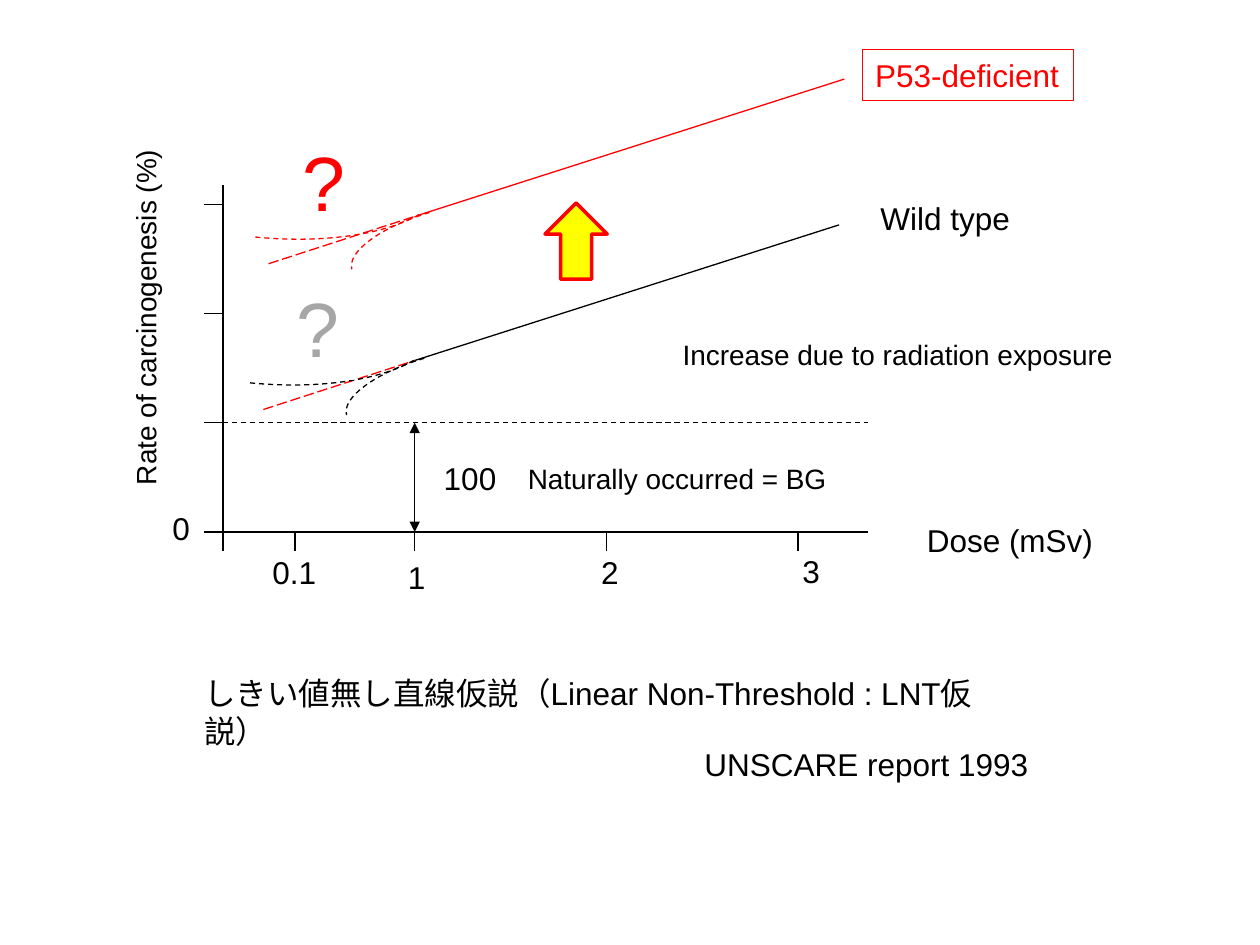
from dataclasses import dataclass

from lxml.etree import SubElement
from pptx import Presentation
from pptx.dml.color import RGBColor
from pptx.enum.dml import MSO_LINE
from pptx.enum.shapes import MSO_CONNECTOR, MSO_SHAPE
from pptx.oxml.ns import qn
from pptx.util import Pt


@dataclass(frozen=True)
class Theme:
    font: str = "Arial"
    ink: str = "000000"
    alert: str = "FF0000"
    muted: str = "A6A6A6"
    paper: str = "FFFFFF"
    highlight: str = "FFFF00"
    note: float = 16
    body: float = 18
    mark: float = 44
    thin: float = 0.75
    thick: float = 2


THEME = Theme()


@dataclass(frozen=True)
class Label:
    text: str
    left: float
    top: float
    width: float
    height: float = 29
    size: float = THEME.body
    color: str = THEME.ink
    border: str | None = None
    rotation: float = 0
    wrap: bool = False


@dataclass(frozen=True)
class Stroke:
    x1: float
    y1: float
    x2: float
    y2: float
    color: str = THEME.ink
    dash: MSO_LINE | None = None
    arrows: bool = False


@dataclass(frozen=True)
class Arc:
    left: float
    top: float
    width: float
    height: float
    rotation: float
    start: float = 162
    mirrored: bool = False


@dataclass(frozen=True)
class Response:
    shift_x: float
    shift_y: float
    color: str
    mark_color: str
    mark_border: str | None = None


AXIS_X, AXIS_Y, AXIS_RIGHT, AXIS_TOP = 127.5, 304, 496, 106
TICK = 11
RATE_STEP, DOSE_STEP = 62.4, 109.5
BACKGROUND_Y = AXIS_Y - RATE_STEP
DOSE_ONE_X = AXIS_X + DOSE_STEP

AXES = [
    Stroke(AXIS_X, AXIS_TOP, AXIS_X, AXIS_Y),
    Stroke(AXIS_X, AXIS_Y, AXIS_RIGHT, AXIS_Y),
    Stroke(AXIS_X, BACKGROUND_Y, AXIS_RIGHT, BACKGROUND_Y, dash=MSO_LINE.DASH),
    Stroke(DOSE_ONE_X, BACKGROUND_Y, DOSE_ONE_X, AXIS_Y, arrows=True),
]
DOSE_TICKS = [168.5] + [AXIS_X + DOSE_STEP * step for step in range(4)]
RATE_TICKS = [AXIS_Y - RATE_STEP * step for step in range(4)]

LOW_DOSE_ARCS = [
    Arc(196, 204, 103.5, 37.5, 343.8, mirrored=True),
    Arc(103, 68.5, 88.5, 212.5, 95.7, start=170.14),
]
RESPONSES = [
    Response(0, 0, THEME.ink, THEME.muted, THEME.paper),
    Response(3, -83.3, THEME.alert, THEME.alert),
]

LABELS = [
    Label("0", 91.5, 287.5, 24.5),
    Label("0.1", 148.5, 312.5, 39.5),
    Label("1", 226, 315.5, 24.5),
    Label("2", 336.5, 312.5, 24.5),
    Label("3", 451.5, 312, 24.5),
    Label("100", 246.5, 258.5, 44.5),
    Label("しきい値無し直線仮説（Linear Non-Threshold : LNT仮説）", 109.5, 381.5, 463.5, wrap=True),
    Label("Rate of carcinogenesis (%)", -21.5, 166.5, 209, 26.5, THEME.note, rotation=270),
    Label("Increase due to radiation exposure", 383, 189.5, 263.5, 26.5, THEME.note),
    Label("Dose (mSv)", 522.5, 294, 110),
    Label("UNSCARE report 1993", 395.5, 422, 201.5),
    Label("Naturally occurred = BG", 294.5, 260, 187, 26.5, THEME.note),
    Label("Wild type", 496, 110, 89.5),
    Label("P53-deficient", 493, 28.5, 120.5, color=THEME.alert, border=THEME.alert),
]


def paint_line(line, color: str, width: float = THEME.thin, dash: MSO_LINE | None = None) -> None:
    line.color.rgb = RGBColor.from_string(color)
    line.width = Pt(width)
    if dash is not None:
        line.dash_style = dash


def draw_label(page, label: Label) -> None:
    box = page.shapes.add_textbox(Pt(label.left), Pt(label.top), Pt(label.width), Pt(label.height))
    box.rotation = label.rotation
    box.text_frame.word_wrap = label.wrap
    if label.border:
        paint_line(box.line, label.border)
    para = box.text_frame.paragraphs[0]
    para.text = label.text
    para.font.name = THEME.font
    para.font.size = Pt(label.size)
    para.font.color.rgb = RGBColor.from_string(label.color)


def draw_stroke(page, stroke: Stroke) -> None:
    connector = page.shapes.add_connector(
        MSO_CONNECTOR.STRAIGHT, Pt(stroke.x1), Pt(stroke.y1), Pt(stroke.x2), Pt(stroke.y2)
    )
    paint_line(connector.line, stroke.color, dash=stroke.dash)
    properties = connector.element.spPr
    if stroke.arrows:
        for end in ("a:headEnd", "a:tailEnd"):
            SubElement(properties.find(qn("a:ln")), qn(end), type="triangle")
    SubElement(properties, qn("a:effectLst"))


def draw_arc(page, arc: Arc, response: Response) -> None:
    shape = page.shapes.add_shape(
        MSO_SHAPE.ARC,
        Pt(arc.left + response.shift_x),
        Pt(arc.top + response.shift_y),
        Pt(arc.width),
        Pt(arc.height),
    )
    shape.rotation = arc.rotation
    shape.adjustments[0] = arc.start
    shape.shadow.inherit = False
    shape.fill.background()
    paint_line(shape.line, response.color, dash=MSO_LINE.DASH)
    if arc.mirrored:
        shape.element.spPr.find(qn("a:xfrm")).set("flipH", "1")


def draw_response(page, response: Response) -> None:
    x, y = response.shift_x, response.shift_y
    draw_stroke(page, Stroke(237 + x, 206 + y, 479.5 + x, 128.5 + y, response.color))
    draw_stroke(page, Stroke(150.5 + x, 234 + y, 237 + x, 206 + y, THEME.alert, MSO_LINE.LONG_DASH))
    for arc in LOW_DOSE_ARCS:
        draw_arc(page, arc, response)
    draw_label(page, Label("?", 162.5 + x, 156.5 + y, 39.5, 60.5, THEME.mark,
                           response.mark_color, response.mark_border))


def draw_increase_arrow(page) -> None:
    arrow = page.shapes.add_shape(MSO_SHAPE.UP_ARROW, Pt(311.5), Pt(116), Pt(35.5), Pt(43.5))
    arrow.shadow.inherit = False
    arrow.fill.solid()
    arrow.fill.fore_color.rgb = RGBColor.from_string(THEME.highlight)
    paint_line(arrow.line, THEME.alert, THEME.thick)


def main() -> None:
    deck = Presentation()
    deck.slide_width, deck.slide_height = Pt(720), Pt(540)
    page = deck.slides.add_slide(deck.slide_layouts[6])
    rate_ticks = [Stroke(AXIS_X, y, AXIS_X - TICK, y) for y in RATE_TICKS]
    dose_ticks = [Stroke(x, AXIS_Y, x, AXIS_Y + TICK) for x in DOSE_TICKS]
    for stroke in AXES + rate_ticks + dose_ticks:
        draw_stroke(page, stroke)
    for response in RESPONSES:
        draw_response(page, response)
    draw_increase_arrow(page)
    for label in LABELS:
        draw_label(page, label)
    deck.save("out.pptx")


if __name__ == "__main__":
    main()
